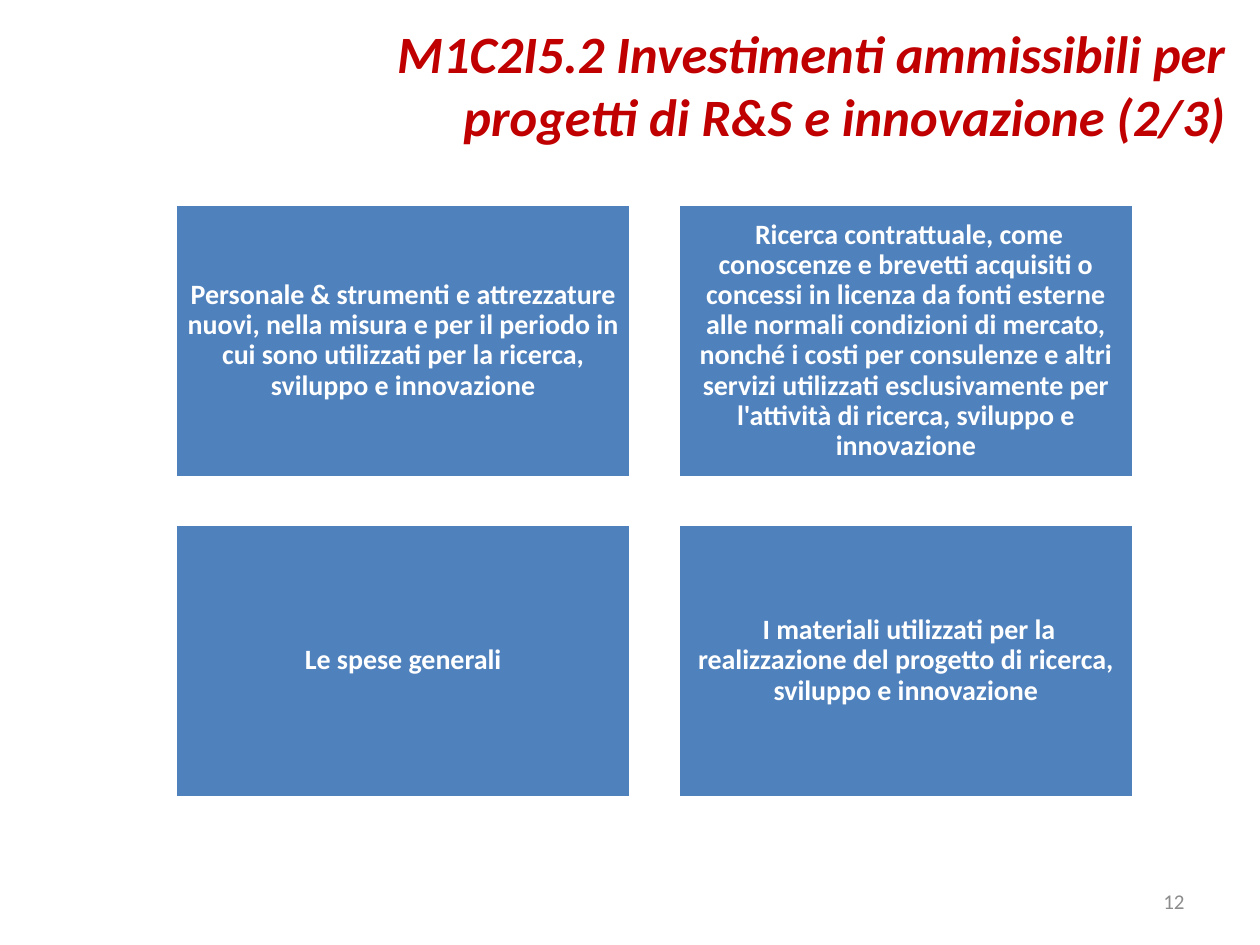
from pptx import Presentation
from pptx import util as u
from pptx.dml.color import RGBColor
from pptx.enum import shapes, text

COLORS = {"title": "C00000", "card": "4F81BD", "white": "FFFFFF", "number": "8C8C8C"}
CARDS = [
    "Personale & strumenti e attrezzature nuovi, nella misura e per il periodo in cui sono "
    "utilizzati per la ricerca, sviluppo e innovazione",
    " Ricerca contrattuale, come conoscenze e brevetti acquisiti o concessi in licenza da fonti "
    "esterne alle normali condizioni di mercato, nonché i costi per consulenze e altri servizi "
    "utilizzati esclusivamente per l'attività di ricerca, sviluppo e innovazione",
    "Le spese generali",
    " I materiali utilizzati per la realizzazione del progetto di ricerca, sviluppo e innovazione",
]
LEFT, TOP, WIDTH, HEIGHT = 1.39, 1.62, 3.62, 2.17
STEP_X, STEP_Y = 3.99, 2.54


def write(shape, words, size, color, align, anchor, bold=False, italic=False):
    frame = shape.text_frame
    frame.word_wrap = True
    frame.auto_size = text.MSO_AUTO_SIZE.NONE
    frame.vertical_anchor = anchor
    frame.text = words
    para = frame.paragraphs[0]
    para.alignment = align
    font = para.font
    font.name = "Calibri"
    font.size = u.Pt(size)
    font.bold = bold
    font.italic = italic
    font.color.rgb = RGBColor.from_string(COLORS[color])
    return frame


deck = Presentation()
deck.slide_width, deck.slide_height = u.Inches(10), u.Inches(7.5)
page = deck.slides.add_slide(deck.slide_layouts[5])

title = page.shapes.title
title.left, title.top = u.Inches(2.95), u.Inches(0.12)
title.width, title.height = u.Inches(6.88), u.Inches(1.11)
write(title, "M1C2I5.2 Investimenti ammissibili per progetti di R&S e innovazione (2/3)",
      30, "title", text.PP_ALIGN.RIGHT, text.MSO_ANCHOR.TOP, bold=True, italic=True)

for index, words in enumerate(CARDS):
    row, column = divmod(index, 2)
    card = page.shapes.add_shape(
        shapes.MSO_SHAPE.RECTANGLE,
        u.Inches(LEFT + column * STEP_X), u.Inches(TOP + row * STEP_Y),
        u.Inches(WIDTH), u.Inches(HEIGHT))
    card.shadow.inherit = False
    card.fill.solid()
    card.fill.fore_color.rgb = RGBColor.from_string(COLORS["card"])
    card.line.color.rgb = RGBColor.from_string(COLORS["white"])
    card.line.width = u.Pt(2)
    frame = write(card, words, 16, "white", text.PP_ALIGN.CENTER,
                  text.MSO_ANCHOR.MIDDLE, bold=True)
    frame.margin_left = frame.margin_right = u.Inches(0.07)
    frame.margin_top = frame.margin_bottom = u.Inches(0.07)
    frame.paragraphs[0].line_spacing = 0.9

number = page.shapes.add_textbox(u.Inches(7.17), u.Inches(6.95), u.Inches(2.33), u.Inches(0.4))
write(number, "12", 12, "number", text.PP_ALIGN.RIGHT, text.MSO_ANCHOR.MIDDLE)

deck.save("out.pptx")
